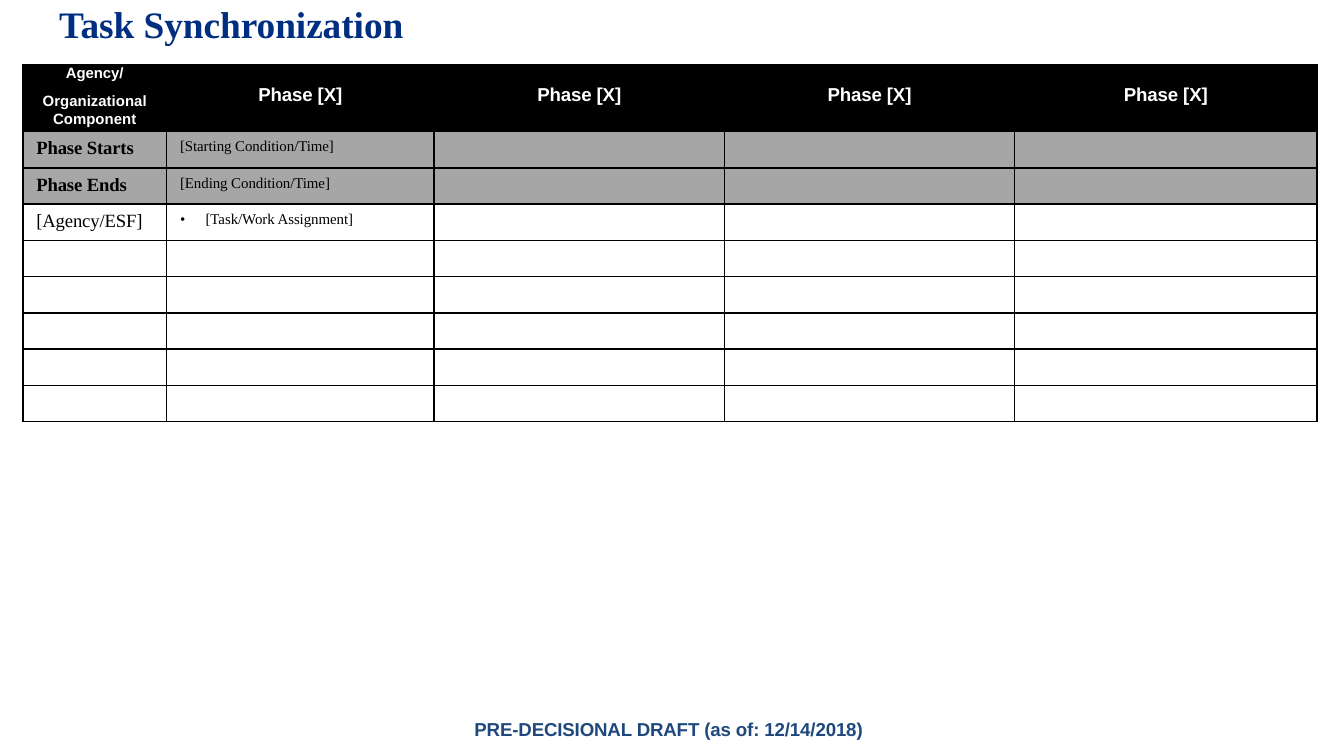
"""Build the Task Synchronization slide with its phase matrix."""
import lxml.etree
import pptx
import pptx.dml.color
import pptx.enum.text
import pptx.oxml.ns
import pptx.util

Inches, Pt = pptx.util.Inches, pptx.util.Pt
qn = pptx.oxml.ns.qn
ALIGN = pptx.enum.text.PP_ALIGN
TOP = pptx.enum.text.MSO_ANCHOR.TOP
COLOURS = {"title": "002E80", "draft": "1F487C", "white": "FFFFFF", "black": "000000", "grey": "A6A6A6"}
SERIF, SANS = "Times New Roman", "Arial"
COLUMNS = [1.07, 1.99, 2.16, 2.16, 2.25]
ROWS = [0.5] + [0.27] * 8
PHASE = ["Phase [X]"]
CONTENT = [
    [["Agency/", "Organizational", "Component"]] + [PHASE] * 4,
    [["Phase Starts"], ["[Starting Condition/Time]"]],
    [["Phase Ends"], ["[Ending Condition/Time]"]],
    [["[Agency/ESF]"], ["[Task/Work Assignment]"]],
]


def rgb(name):
    return pptx.dml.color.RGBColor.from_string(COLOURS[name])


def write(paragraph, text, colour, tracking, **formats):
    run = paragraph.add_run()
    run.text = text
    for key, value in formats.items():
        setattr(run.font, key, value)
    run.font.color.rgb = rgb(colour)
    run.font._element.set("spc", str(tracking))


deck = pptx.Presentation()
deck.slide_width = Inches(10)
deck.slide_height = deck.slide_width * 9 // 16
slide = deck.slides.add_slide(deck.slide_layouts[5])

title = slide.shapes.title
draft_mark = slide.shapes.add_textbox(0, 0, 0, 0)
banners = [
    (title, (0.43, 0, 2.63, 0.36), 0.01, "Task Synchronization", "title", SERIF, 20),
    (draft_mark, (3.52, 5.34, 2.95, 0.18), 0, "PRE-DECISIONAL DRAFT (as of: 12/14/2018)", "draft", SANS, 10),
]
for banner, place, inset, wording, colour, face, size in banners:
    for key, value in zip(("left", "top", "width", "height"), place):
        setattr(banner, key, Inches(value))
    frame = banner.text_frame
    layout = {"margin_left": Inches(0.01), "margin_right": 0, "margin_top": Inches(inset), "margin_bottom": 0,
              "word_wrap": True, "vertical_anchor": TOP, "auto_size": pptx.enum.text.MSO_AUTO_SIZE.NONE}
    for key, value in layout.items():
        setattr(frame, key, value)
    frame.paragraphs[0].alignment = ALIGN.LEFT
    write(frame.paragraphs[0], wording, colour, -5, name=face, size=Pt(size), bold=True)

matrix = slide.shapes.add_table(len(ROWS), len(COLUMNS), Inches(0.17), Inches(0.48),
                                Inches(sum(COLUMNS)), Inches(sum(ROWS))).table
matrix.first_row = matrix.horz_banding = False
for column, width in zip(matrix.columns, COLUMNS):
    column.width = Inches(width)
for row, height in zip(matrix.rows, ROWS):
    row.height = Inches(height)

for r in range(len(ROWS)):
    for c in range(len(COLUMNS)):
        cell = matrix.cell(r, c)
        header, label = r == 0, c == 0
        inset = (0 if label else 0.15) if header else 0.05
        margins = {"margin_left": 0, "margin_right": 0, "margin_top": Inches(inset), "margin_bottom": 0,
                   "vertical_anchor": TOP}
        for key, value in margins.items():
            setattr(cell, key, value)
        properties = cell._tc.get_or_add_tcPr()
        for side in ("a:lnL", "a:lnR", "a:lnT", "a:lnB"):
            border = lxml.etree.SubElement(properties, qn(side), w=str(Pt(1)))
            paint = lxml.etree.SubElement(border, qn("a:solidFill"))
            lxml.etree.SubElement(paint, qn("a:srgbClr"), val=COLOURS["black"])
        if r < 3:
            cell.fill.solid()
            cell.fill.fore_color.rgb = rgb("black" if header else "grey")
        else:
            cell.fill.background()

        lines = CONTENT[r][c] if r < len(CONTENT) and c < len(CONTENT[r]) else []
        if not lines:
            lxml.etree.SubElement(cell.text_frame.paragraphs[0]._p, qn("a:endParaRPr"), sz="1000")
        for n, line in enumerate(lines):
            paragraph = cell.text_frame.paragraphs[0] if n == 0 else cell.text_frame.add_paragraph()
            if header:
                paragraph.alignment = ALIGN.CENTER
                if label and n == 0:
                    paragraph.line_spacing = Pt(9.4)
                elif n:
                    paragraph.space_before = Pt((5.6, 0.8)[n - 1])
            else:
                task = r == 3 and c == 1
                indents = paragraph._p.get_or_add_pPr()
                indents.set("marL", str(Inches(0.29 if task else 0.1)))
                indents.set("indent", str(Inches(-0.19 if task else 0)))
                if task:
                    lxml.etree.SubElement(indents, qn("a:buFont"), typeface=SERIF)
                    lxml.etree.SubElement(indents, qn("a:buChar"), char="•")
            write(paragraph, line, "white" if header else "black", 0 if n else -5,
                  name=SANS if header else SERIF, size=Pt(8 if header == label else 10),
                  bold=header or (label and r < 3))

deck.save("out.pptx")
